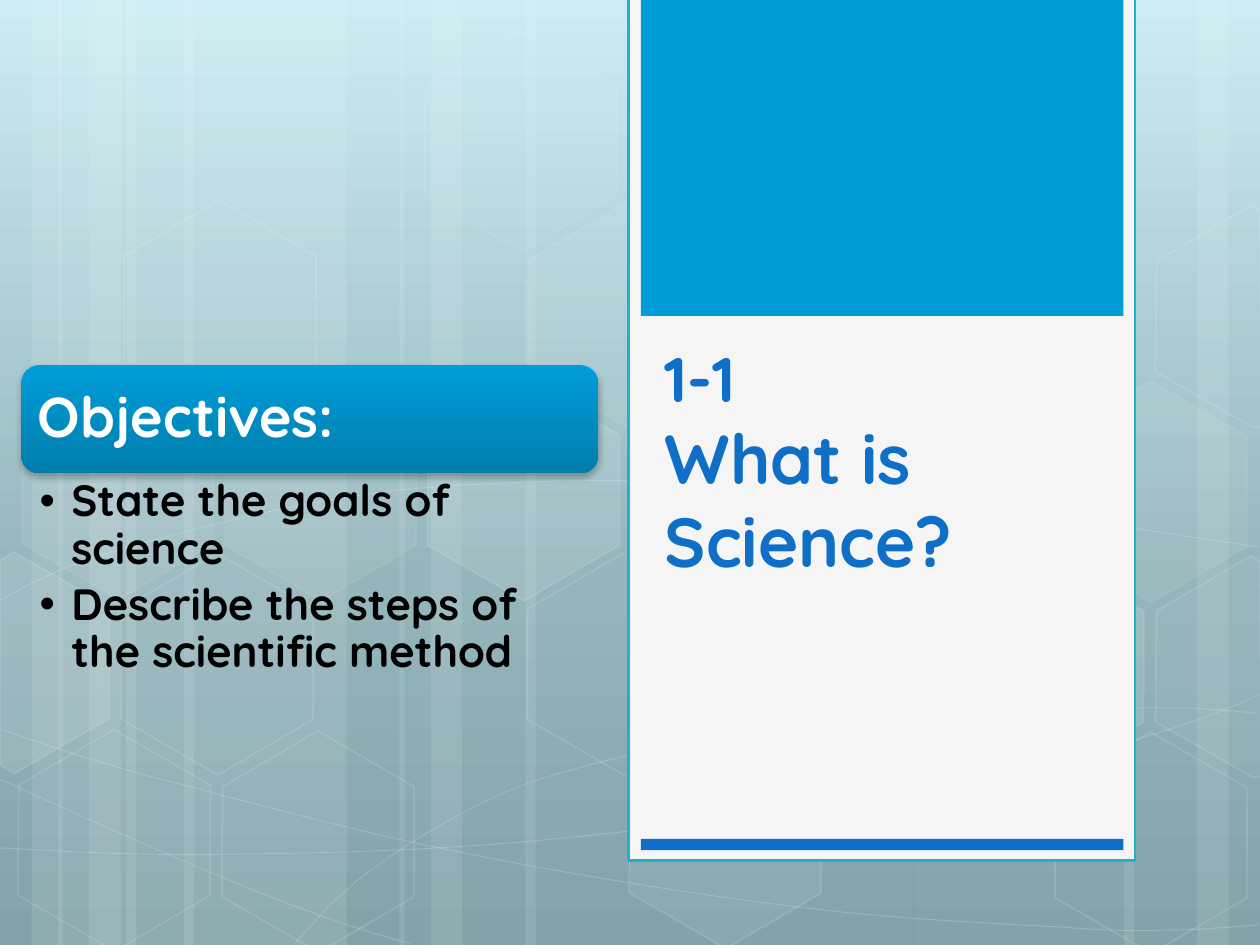
import pptx
import pptx.dml.color
import pptx.enum.shapes
import pptx.enum.text
import pptx.oxml
import pptx.oxml.ns
import pptx.util
from dataclasses import dataclass
from lxml import etree

Cm, Pt = pptx.util.Cm, pptx.util.Pt
qn = pptx.oxml.ns.qn
Kind = pptx.enum.shapes.MSO_SHAPE
Anchor = pptx.enum.text.MSO_ANCHOR


@dataclass(frozen=True)
class Theme:
    font: str = "Quicksand"
    white: str = "FFFFFF"
    black: str = "000000"
    paper: str = "F5F5F5"
    edge: str = "21B2C9"
    sky: str = "009DD9"
    deep: str = "007DAC"
    blue: str = "0F6FC6"
    back: tuple = ((0, "C4EBF1"), (62, "88ADB3"), (100, "749AA0"))
    code: float = 36
    title: float = 39.6
    head: float = 32
    body: float = 25


THEME = Theme()

# Stripes: left edge and width
BARS = [(2.54, 4.45), (0, 1.27), (0.64, 2.11), (3.71, 4.45), (1.17, 1.27),
        (1.8, 2.11), (18.42, 4.45), (24.13, 1.27), (22.66, 2.11),
        (10.59, 7.82), (8.05, 1.27), (8.69, 2.11)]

# Hexagons: left, top, fill opacity, line opacity
CELLS = [(8.33, 7.95, 10, 12), (10.34, 11.46, 0, 12), (10.36, 4.42, 7, 8),
         (8.28, 0.91, 4, 8), (12.4, 14.96, 6, 12), (0.08, 15.01, 0, 12),
         (0.15, 7.92, 7, 8), (2.16, 11.46, 0, 12), (4.19, 15.04, 0, 12),
         (4.24, 7.95, 7, 8), (2.21, 4.34, 0, 12), (18.9, 11.51, 10, 12),
         (20.98, 15.06, 0, 12), (20.98, 7.98, 7, 8)]

# Hexagons cut by the slide edge
LEFT = [(0, 11.3), (0.28, 11.13), (2.21, 12.24), (2.21, 14.48), (0.28, 15.6), (0, 15.42)]
RIGHT = [(23.32, 12.32), (25.22, 11.2), (25.4, 11.33), (25.43, 15.67),
         (25.25, 15.67), (23.29, 14.55)]
CUTS = [(LEFT, 10), (RIGHT, 4), ([(x, y - 7.06) for x, y in RIGHT], 0)]

# Waves: a start point, then three points for each cubic segment
WAVES = [
    [(-0.03, 17.09), (1.35, 17.17), (2.72, 17.25), (4.62, 17.22),
     (6.53, 17.2), (8.86, 17.15), (11.4, 16.89), (13.97, 16.64), (17.58, 16.15),
     (19.89, 15.67), (22.23, 15.19), (24.59, 14.43), (25.37, 14)],
    [(-0.03, 12.12), (0.69, 11.71), (1.42, 11.33), (2.87, 10.95),
     (4.32, 10.57), (6.35, 10.01), (8.61, 9.83), (10.87, 9.65), (13.59, 9.63),
     (16.38, 9.83), (19.18, 10.03), (23.85, 10.82), (25.37, 11.02)],
    [(-0.08, 15.67), (3, 17.07), (6.07, 18.47), (8.28, 19.02)],
    [(-0.03, 14.68), (0.76, 14.96), (1.55, 15.24), (3.02, 15.65),
     (4.52, 16.03), (6.73, 16.66), (8.84, 17.09), (10.95, 17.53), (13.64, 17.98),
     (15.72, 18.24), (17.83, 18.52), (20.09, 18.62), (21.44, 18.69),
     (22.78, 18.8), (23.14, 18.75), (23.77, 18.75), (24.43, 18.72),
     (24.89, 18.69), (25.37, 18.64)],
    [(5.94, 19.02), (6.4, 18.52), (6.83, 18.01), (7.47, 17.55),
     (8.08, 17.09), (8.92, 16.59), (9.63, 16.23), (10.34, 15.88), (10.77, 15.72),
     (11.71, 15.47), (12.65, 15.21), (14.35, 14.86), (15.24, 14.68),
     (16.13, 14.5), (16.26, 14.5), (17.04, 14.45), (17.83, 14.38),
     (19.08, 14.3), (19.96, 14.27), (20.83, 14.25), (22.3, 14.27),
     (23.98, 14.27), (24.46, 14.3), (24.87, 14.33), (25.32, 14.38)],
]


def rgb(hue):
    return pptx.dml.color.RGBColor.from_string(hue)


def fade(shape, alpha):
    """Set the opacity of the colour that was added last."""
    if alpha < 100:
        tone = list(shape.element.spPr.iter(qn("a:srgbClr")))[-1]
        etree.SubElement(tone, qn("a:alpha"), val=str(alpha * 1000))


def paint(shape, fill=None, see=100, line=None, width=1, dim=100):
    shape.shadow.inherit = False
    if fill and see:
        shape.fill.solid()
        shape.fill.fore_color.rgb = rgb(fill)
        fade(shape, see)
    else:
        shape.fill.background()
    if line:
        shape.line.color.rgb = rgb(line)
        shape.line.width = Pt(width)
        fade(shape, dim)
    else:
        shape.line.fill.background()


def blend(fill, root, stops):
    """Fill from top to bottom through the given stops."""
    fill.gradient()
    fill.gradient_angle = 270
    ramp = next(root.iter(qn("a:gsLst")))
    for old in list(ramp):
        ramp.remove(old)
    for pos, hue in stops:
        stop = etree.SubElement(ramp, qn("a:gs"), pos=str(pos * 1000))
        etree.SubElement(stop, qn("a:srgbClr"), val=hue)


def block(slide, kind, x, y, w, h):
    return slide.shapes.add_shape(kind, Cm(x), Cm(y), Cm(w), Cm(h))


def trace(slide, box, dots, close):
    dots = [(Cm(box[0] + x), Cm(box[1] + y)) for x, y in dots]
    pen = slide.shapes.build_freeform(*dots[0])
    pen.add_line_segments(dots[1:], close=close)
    return pen.convert_to_shape()


def wave(slide, box, knots):
    """Draw the knots, then join each three steps into one cubic segment."""
    shape = trace(slide, box, knots, False)
    steps = list(shape.element.spPr.iter(qn("a:lnTo")))
    for i in range(0, len(steps), 3):
        bend = etree.Element(qn("a:cubicBezTo"))
        steps[i].addprevious(bend)
        for step in steps[i:i + 3]:
            bend.append(step[0])
            step.getparent().remove(step)
    return shape


def setup(frame, anchor, pads):
    frame.word_wrap = True
    frame.vertical_anchor = anchor
    (frame.margin_left, frame.margin_top,
     frame.margin_right, frame.margin_bottom) = map(Cm, pads)


def style(run, size, hue):
    run.font.name, run.font.size, run.font.bold = THEME.font, Pt(size), True
    run.font.color.rgb = rgb(hue)


def backdrop(slide, box):
    x, y, w, h = box
    blend(slide.background.fill, slide.element, THEME.back)
    for left, wide in BARS:
        paint(block(slide, Kind.RECTANGLE, x + left, y, wide, h), THEME.white, 10)
    for knots in WAVES:
        paint(wave(slide, box, knots), line=THEME.white, width=0.5, dim=20)
    for left, top, see, dim in CELLS:
        cell = block(slide, Kind.HEXAGON, x + left, y + top, 4.45, 3.86)
        cell.adjustments[0] = 0.285
        cell.rotation = 30
        paint(cell, THEME.white, see, THEME.white, 1, dim)
    for dots, see in CUTS:
        paint(trace(slide, box, dots, True), THEME.white, see, THEME.white, 1, 12)


def card(slide, box):
    x, y, w, h = box
    paint(block(slide, Kind.RECTANGLE, *box), THEME.paper, line=THEME.edge, width=1.25)
    for top, high, hue in ((0, 6.42, THEME.sky), (h - 0.44, 0.23, THEME.blue)):
        paint(block(slide, Kind.RECTANGLE, x + 0.25, y + top, w - 0.48, high), hue)
    # Title
    text = slide.shapes.add_textbox(Cm(x + 0.48), Cm(y + 7.19), Cm(9.19), Cm(4.72))
    setup(text.text_frame, Anchor.BOTTOM, (0.25, 0.13, 0.25, 0.13))
    para = text.text_frame.paragraphs[0]
    para.text = "1-1 \vWhat is Science?"
    for run, size in zip(para.runs, (THEME.code, THEME.title)):
        style(run, size, THEME.blue)


def goals(slide, box):
    x, y, w, h = box
    high = 2.18
    # Heading bar with a soft shadow
    bar = block(slide, Kind.ROUNDED_RECTANGLE, x, y, w, high)
    paint(bar)
    blend(bar.fill, bar.element, ((0, THEME.sky), (100, THEME.deep)))
    glow = etree.SubElement(bar.element.spPr.find(qn("a:effectLst")), qn("a:outerShdw"),
                            blurRad=str(Pt(4)), dist=str(Pt(2)), dir="5400000", rotWithShape="0")
    tone = etree.SubElement(glow, qn("a:srgbClr"), val=THEME.black)
    etree.SubElement(tone, qn("a:alpha"), val="28000")
    setup(bar.text_frame, Anchor.MIDDLE, (0.23,) * 4)
    para = bar.text_frame.paragraphs[0]
    para.text = "Objectives:"
    para.alignment = pptx.enum.text.PP_ALIGN.LEFT
    para.line_spacing = 0.9
    style(para.runs[0], THEME.head, THEME.white)
    # Bullet list
    text = slide.shapes.add_textbox(Cm(x), Cm(y + high), Cm(w), Cm(h - high))
    setup(text.text_frame, Anchor.TOP, (0.37, 0.12, 0.64, 0.1))
    text.text_frame.text = "State the goals of science\nDescribe the steps of the scientific method"
    for para in text.text_frame.paragraphs:
        para.line_spacing, para.space_after = 0.9, Pt(5)
        props = para._p.get_or_add_pPr()
        props.set("marL", str(Cm(0.64)))
        props.set("indent", str(Cm(-0.64)))
        etree.SubElement(props, qn("a:buFont"), typeface="Arial")
        etree.SubElement(props, qn("a:buChar"), char="•")
        style(para.runs[0], THEME.body, THEME.black)


def main():
    deck = pptx.Presentation()
    deck.slide_width, deck.slide_height = Cm(25.4), Cm(19.05)
    slide = deck.slides.add_slide(deck.slide_layouts[6])
    backdrop(slide, (0, 0, 25.4, 19.05))
    card(slide, (12.67, -0.05, 10.21, 17.4))
    goals(slide, (0.43, 7.36, 11.63, 8.18))
    deck.save("out.pptx")


if __name__ == "__main__":
    main()
